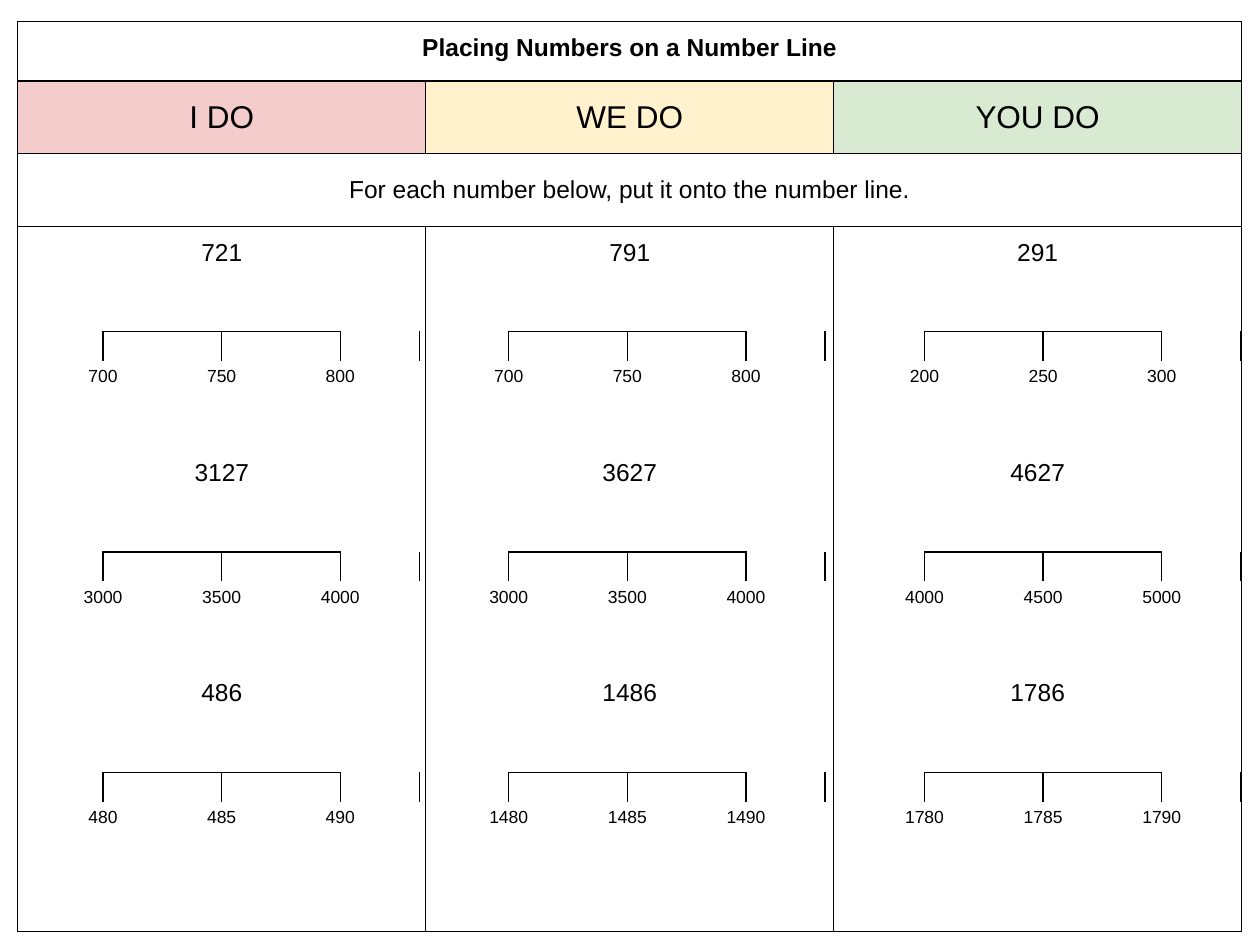
from dataclasses import dataclass
from itertools import product

from lxml.etree import SubElement
from pptx import Presentation
from pptx.dml.color import RGBColor
from pptx.enum.text import MSO_ANCHOR, PP_ALIGN
from pptx.oxml.ns import qn
from pptx.util import Pt

PLAIN_STYLE = "{2D5ABB26-0587-4C30-8999-92F81FD0307C}"
BLACK = "000000"
TICK_WIDTH = 45.2
TICK_COLUMNS = [TICK_WIDTH, TICK_WIDTH, TICK_WIDTH / 2, TICK_WIDTH / 2, TICK_WIDTH, TICK_WIDTH]
TICK_ROWS = [16.8, 19.7]
FIRST_LINE_TOP = 189.4
LINE_PITCH = 126
NUMBER_GAP = 110


@dataclass
class Problem:
    number: int
    start: int
    step: int


@dataclass
class Lesson:
    heading: str
    fill: str
    line_left: float
    problems: list[Problem]


LESSONS = [
    Lesson("I DO", "F4CCCC", 13.7,
           [Problem(721, 700, 50), Problem(3127, 3000, 500), Problem(486, 480, 5)]),
    Lesson("WE DO", "FFF2CC", 245.5,
           [Problem(791, 700, 50), Problem(3627, 3000, 500), Problem(1486, 1480, 5)]),
    Lesson("YOU DO", "D9EAD3", 483.1,
           [Problem(291, 200, 50), Problem(4627, 4000, 500), Problem(1786, 1780, 5)]),
]


def colour(value: str) -> RGBColor:
    return RGBColor.from_string(value)


def apply_format(target, values: dict) -> None:
    for name, value in values.items():
        setattr(target, name, value)


def add_grid(page, left: float, top: float, widths: list[float], heights: list[float]):
    frame = page.shapes.add_table(len(heights), len(widths), Pt(left), Pt(top),
                                  Pt(sum(widths)), Pt(sum(heights)))
    table = frame.table
    apply_format(table, {"first_row": False, "horz_banding": False})
    frame._element.find(".//" + qn("a:tableStyleId")).text = PLAIN_STYLE
    for column, width in zip(table.columns, widths):
        column.width = Pt(width)
    for row, height in zip(table.rows, heights):
        row.height = Pt(height)
    for cell in table.iter_cells():
        cell.fill.background()
    return table


def set_borders(cell, sides: str, width: float) -> None:
    properties = cell._tc.get_or_add_tcPr()
    for position, side in enumerate(sides):
        line = SubElement(properties, qn(f"a:ln{side}"), w=str(Pt(width)))
        properties.insert(position, line)
        fill = SubElement(line, qn("a:solidFill"))
        SubElement(fill, qn("a:srgbClr"), val=BLACK)


def set_margins(cell, horizontal: float, vertical: float) -> None:
    apply_format(cell, {"margin_left": Pt(horizontal), "margin_right": Pt(horizontal),
                        "margin_top": Pt(vertical), "margin_bottom": Pt(vertical)})


def write_text(cell, lines: list[str], size: float, bold: bool = False, gap: float = 0) -> None:
    for index, words in enumerate(lines):
        para = cell.text_frame.paragraphs[0] if index == 0 else cell.text_frame.add_paragraph()
        apply_format(para, {"alignment": PP_ALIGN.CENTER,
                            "space_before": Pt(gap if index else 0)})
        span = para.add_run()
        span.text = words
        apply_format(span.font, {"name": "Arial", "size": Pt(size), "bold": bold})
        span.font.color.rgb = colour(BLACK)


def draw_worksheet(page) -> None:
    table = add_grid(page, 10.2, 12.1, [233.1] * 3, [34.2, 41.6, 41.6, 402.7])
    for cell in table.iter_cells():
        set_margins(cell, 7.2, 7.2)
        set_borders(cell, "LRTB", 0.75)
    for row in (0, 2):
        table.cell(row, 0).merge(table.cell(row, 2))
    write_text(table.cell(0, 0), ["Placing Numbers on a Number Line"], 14, bold=True)
    write_text(table.cell(2, 0), ["For each number below, put it onto the number line."], 14)
    table.cell(2, 0).vertical_anchor = MSO_ANCHOR.MIDDLE
    for column, lesson in enumerate(LESSONS):
        heading = table.cell(1, column)
        heading.vertical_anchor = MSO_ANCHOR.MIDDLE
        heading.fill.solid()
        heading.fill.fore_color.rgb = colour(lesson.fill)
        write_text(heading, [lesson.heading], 18)
        numbers = [str(problem.number) for problem in lesson.problems]
        write_text(table.cell(3, column), numbers, 14, gap=NUMBER_GAP)


def draw_number_line(page, left: float, top: float, problem: Problem) -> None:
    table = add_grid(page, left, top, TICK_COLUMNS, TICK_ROWS)
    for column, sides in enumerate(["R", "LRT", "LRT", "LRT", "LRT", "L"]):
        cell = table.cell(0, column)
        set_borders(cell, sides, 1)
        set_margins(cell, 0, 0)
        SubElement(cell.text_frame.paragraphs[0]._p, qn("a:endParaRPr"), sz="800")
    for row, column in [(0, 1), (0, 3), (1, 0), (1, 2), (1, 4)]:
        table.cell(row, column).merge(table.cell(row, column + 1))
    for index in range(3):
        label = table.cell(1, 2 * index)
        set_margins(label, 7.2, 3.6)
        write_text(label, [str(problem.start + index * problem.step)], 10)


def main() -> None:
    deck = Presentation()
    apply_format(deck, {"slide_width": Pt(720), "slide_height": Pt(540)})
    page = deck.slides.add_slide(deck.slide_layouts[6])
    draw_worksheet(page)
    for lesson, index in product(LESSONS, range(3)):
        draw_number_line(page, lesson.line_left, FIRST_LINE_TOP + index * LINE_PITCH,
                         lesson.problems[index])
    deck.save("out.pptx")


if __name__ == "__main__":
    main()
